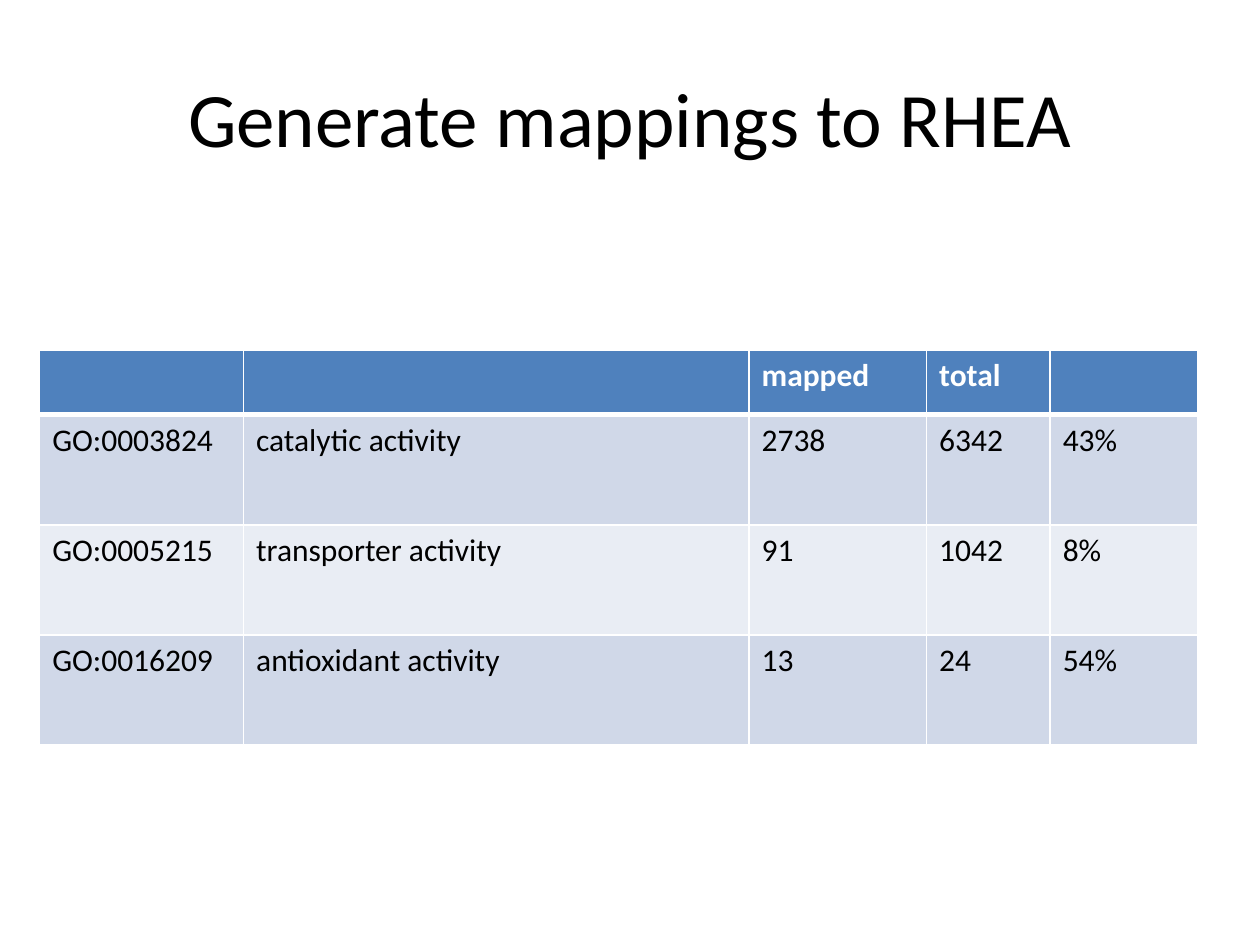
import pptx
import pptx.util
import pptx.dml.color
import pptx.enum.text
import pptx.oxml
import pptx.oxml.ns
from pptx.util import Cm, Pt


def color(hex_string):
    return pptx.dml.color.RGBColor.from_string(hex_string)


def add_border(cell, side, width, hex_string, position):
    line = pptx.oxml.parse_xml(
        f'<a:{side} {pptx.oxml.ns.nsdecls("a")} w="{Pt(width)}">'
        f'<a:solidFill><a:srgbClr val="{hex_string}"/></a:solidFill></a:{side}>')
    cell._tc.get_or_add_tcPr().insert(position, line)


presentation = pptx.Presentation()
presentation.slide_width, presentation.slide_height = Cm(25.4), Cm(19.05)
slide = presentation.slides.add_slide(presentation.slide_layouts[5])

# Title
title = slide.shapes.title
title.left, title.top, title.width, title.height = Cm(1.27), Cm(0.76), Cm(22.86), Cm(3.18)
title.text_frame.text = "Generate mappings to RHEA"
title.text_frame.vertical_anchor = pptx.enum.text.MSO_ANCHOR.MIDDLE
heading = title.text_frame.paragraphs[0]
heading.alignment = pptx.enum.text.PP_ALIGN.CENTER
heading.runs[0].font.name = "Calibri"
heading.runs[0].font.size = Pt(44)
heading.runs[0].font.color.rgb = color("000000")

# Mapping counts
mapping_rows = [
    ("", "", "mapped", "total", ""),
    ("GO:0003824", "catalytic activity", "2738", "6342", "43%"),
    ("GO:0005215", "transporter activity", "91", "1042", "8%"),
    ("GO:0016209", "antioxidant activity", "13", "24", "54%"),
]
column_widths = [4.11, 10.19, 3.58, 2.49, 2.97]
row_heights = [1.3, 2.22, 2.22, 2.22]
mappings = slide.shapes.add_table(
    len(mapping_rows), len(column_widths), Cm(0.8), Cm(7.06),
    Cm(sum(column_widths)), Cm(sum(row_heights))).table
for column, width in zip(mappings.columns, column_widths):
    column.width = Cm(width)
for row, height in zip(mappings.rows, row_heights):
    row.height = Cm(height)

# Cell text, banded fills and white rules, thicker below the header
for r, values in enumerate(mapping_rows):
    is_header = r == 0
    fill = "4F81BD" if is_header else ("E9EDF4", "D0D8E8")[r % 2]
    border_widths = {"lnL": 1, "lnR": 1, "lnT": 3 if r == 1 else 1, "lnB": 3 if is_header else 1}
    for c, value in enumerate(values):
        cell = mappings.cell(r, c)
        cell.fill.solid()
        cell.fill.fore_color.rgb = color(fill)
        for position, (side, width) in enumerate(border_widths.items()):
            add_border(cell, side, width, "FFFFFF", position)
        cell.text_frame.text = value
        for run in cell.text_frame.paragraphs[0].runs:
            run.font.name = "Calibri"
            run.font.size = Pt(18)
            run.font.bold = is_header
            run.font.color.rgb = color("FFFFFF" if is_header else "000000")

presentation.save("out.pptx")
